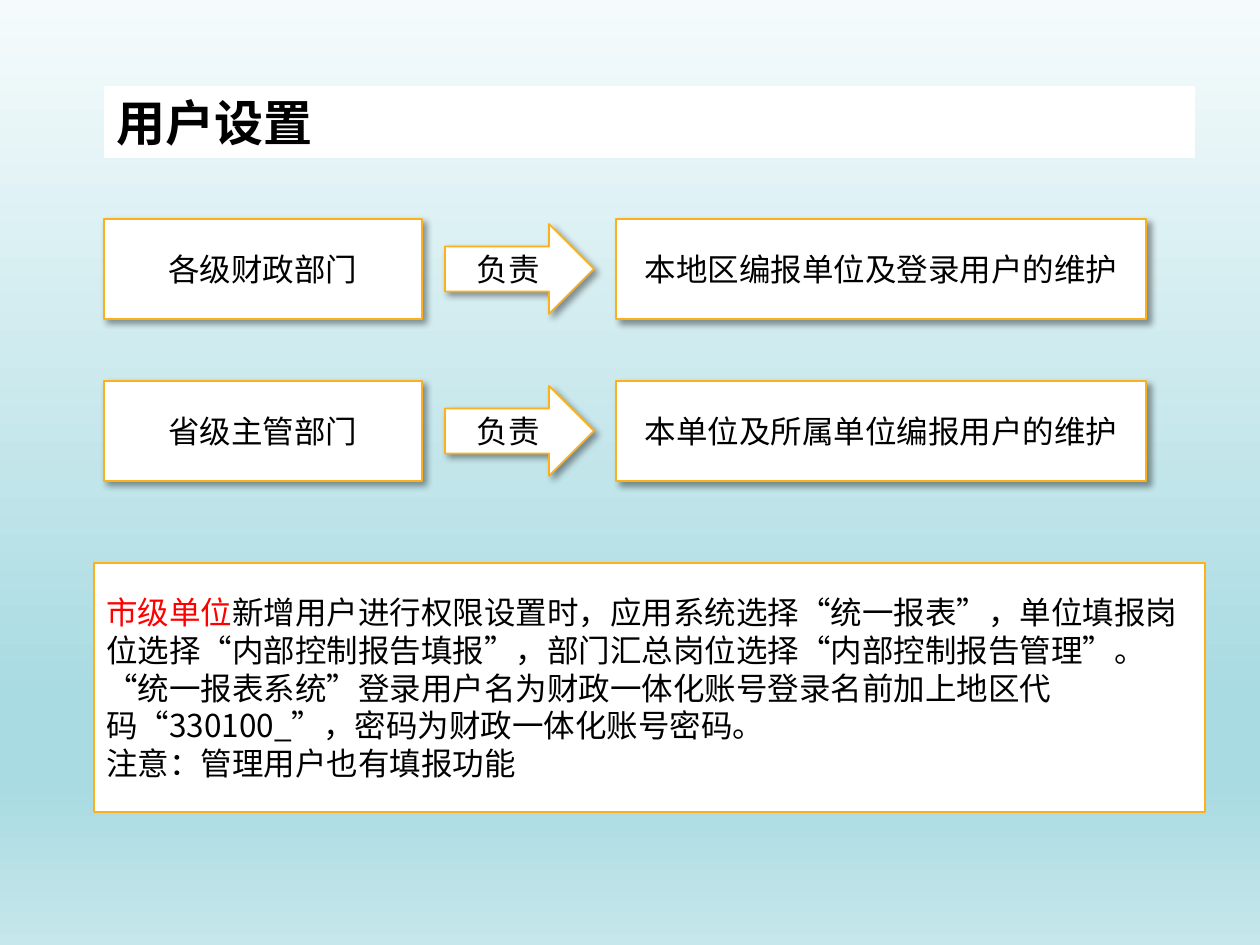
"""Build the user settings slide: who maintains which users, and a setup note."""
from dataclasses import dataclass

from lxml import etree
from pptx import Presentation
from pptx.dml.color import RGBColor
from pptx.enum.shapes import MSO_SHAPE
from pptx.enum.text import MSO_ANCHOR, MSO_AUTO_SIZE, PP_ALIGN
from pptx.oxml.ns import qn
from pptx.shapes.autoshape import Shape
from pptx.slide import Slide
from pptx.util import Emu, Pt

RECTANGLE = MSO_SHAPE.RECTANGLE
RIGHT_ARROW = MSO_SHAPE.RIGHT_ARROW
PROCESS = MSO_SHAPE.FLOWCHART_PROCESS
MIDDLE = MSO_ANCHOR.MIDDLE
NO_AUTOFIT = MSO_AUTO_SIZE.NONE
LEFT, CENTER = PP_ALIGN.LEFT, PP_ALIGN.CENTER

PX = 914400 / 126
FONT = "Noto Sans CJK SC"
BLACK = RGBColor(0x00, 0x00, 0x00)
WHITE = RGBColor(0xFF, 0xFF, 0xFF)
RED = RGBColor(0xFF, 0x00, 0x00)
AMBER = RGBColor(0xFC, 0xB1, 0x1C)
SKY_STOPS = (
    (0, RGBColor(0xF5, 0xFB, 0xFC)),
    (74, RGBColor(0xA9, 0xDB, 0xE2)),
    (83, RGBColor(0xA9, 0xDB, 0xE2)),
    (100, RGBColor(0xC6, 0xE7, 0xEB)),
)


@dataclass(frozen=True)
class Box:
    left: int
    top: int
    width: int
    height: int


@dataclass(frozen=True)
class Responsibility:
    department: str
    duty: str


TITLE_BOX = Box(104, 86, 1091, 72)
NOTE_BOX = Box(94, 563, 1111, 249)
FIRST_ROW_CENTER, ROW_PITCH = 269, 162
RESPONSIBILITIES = (
    Responsibility("各级财政部门", "本地区编报单位及登录用户的维护"),
    Responsibility("省级主管部门", "本单位及所属单位编报用户的维护"),
)
NOTE_SUBJECT = "市级单位"
NOTE_BODY = (
    "新增用户进行权限设置时，应用系统选择“统一报表”，单位填报岗位选择“内部控制报告填报”，"
    "部门汇总岗位选择“内部控制报告管理”。“统一报表系统”登录用户名为财政一体化账号登录名前"
    "加上地区代码“330100_”，密码为财政一体化账号密码。"
)
NOTE_REMINDER = "注意：管理用户也有填报功能"


def px(length: int) -> Emu:
    return Emu(round(length * PX))


def paint_background(slide: Slide) -> None:
    fill = slide.background.fill
    fill.gradient()
    fill.gradient_angle = 270
    stops = slide.element.find(f".//{qn('a:gsLst')}")
    for stop in list(stops):
        stops.remove(stop)
    for percent, color in SKY_STOPS:
        stop = etree.SubElement(stops, qn("a:gs"), pos=str(percent * 1000))
        etree.SubElement(stop, qn("a:srgbClr"), val=str(color))


def format_text(shape: Shape, size: int, align: PP_ALIGN, bold: bool = False) -> None:
    shape.text_frame.word_wrap = True
    shape.text_frame.vertical_anchor = MIDDLE
    for paragraph in shape.text_frame.paragraphs:
        paragraph.alignment = align
        font = paragraph.font
        font.size, font.bold, font.name = Pt(size), bold, FONT
        font.color.rgb = BLACK
        defaults = paragraph._p.find(f".//{qn('a:defRPr')}")
        etree.SubElement(defaults, qn("a:ea"), typeface=FONT)


def add_panel(slide: Slide, kind: MSO_SHAPE, box: Box) -> Shape:
    panel = slide.shapes.add_shape(
        kind, px(box.left), px(box.top), px(box.width), px(box.height))
    panel.shadow.inherit = False
    panel.fill.solid()
    panel.fill.fore_color.rgb = WHITE
    panel.line.color.rgb = AMBER
    panel.line.width = Pt(1)
    return panel


def cast_shadow(shape: Shape) -> None:
    effects = shape.element.spPr.find(qn("a:effectLst"))
    shadow = etree.SubElement(
        effects, qn("a:outerShdw"), blurRad=str(Pt(4)), dist=str(Pt(3)),
        dir="2700000", algn="tl", rotWithShape="0")
    color = etree.SubElement(shadow, qn("a:srgbClr"), val=str(BLACK))
    etree.SubElement(color, qn("a:alpha"), val="40000")


def add_responsibility(slide: Slide, item: Responsibility, center: int) -> None:
    parts = (
        (RECTANGLE, item.department, 104, 318, 100),
        (RIGHT_ARROW, "负责", 445, 149, 90),
        (RECTANGLE, item.duty, 616, 530, 100),
    )
    for kind, label, left, width, height in parts:
        panel = add_panel(slide, kind, Box(left, center - height // 2, width, height))
        cast_shadow(panel)
        panel.text_frame.text = label
        format_text(panel, 18, CENTER)


def add_title(slide: Slide) -> None:
    title = slide.shapes.title
    title.left, title.top = px(TITLE_BOX.left), px(TITLE_BOX.top)
    title.width, title.height = px(TITLE_BOX.width), px(TITLE_BOX.height)
    title.fill.solid()
    title.fill.fore_color.rgb = WHITE
    title.text_frame.text = "用户设置"
    title.text_frame.auto_size = NO_AUTOFIT
    format_text(title, 28, LEFT, bold=True)


def add_note(slide: Slide) -> None:
    note = add_panel(slide, PROCESS, NOTE_BOX)
    rule = note.text_frame.paragraphs[0]
    subject = rule.add_run()
    subject.text = NOTE_SUBJECT
    subject.font.color.rgb = RED
    rule.add_run().text = NOTE_BODY
    note.text_frame.add_paragraph().text = NOTE_REMINDER
    format_text(note, 18, LEFT)


def main() -> None:
    presentation = Presentation()
    presentation.slide_width, presentation.slide_height = px(1260), px(945)
    slide = presentation.slides.add_slide(presentation.slide_layouts[5])
    paint_background(slide)
    add_title(slide)
    for row, item in enumerate(RESPONSIBILITIES):
        add_responsibility(slide, item, FIRST_ROW_CENTER + row * ROW_PITCH)
    add_note(slide)
    presentation.save("out.pptx")


if __name__ == "__main__":
    main()
